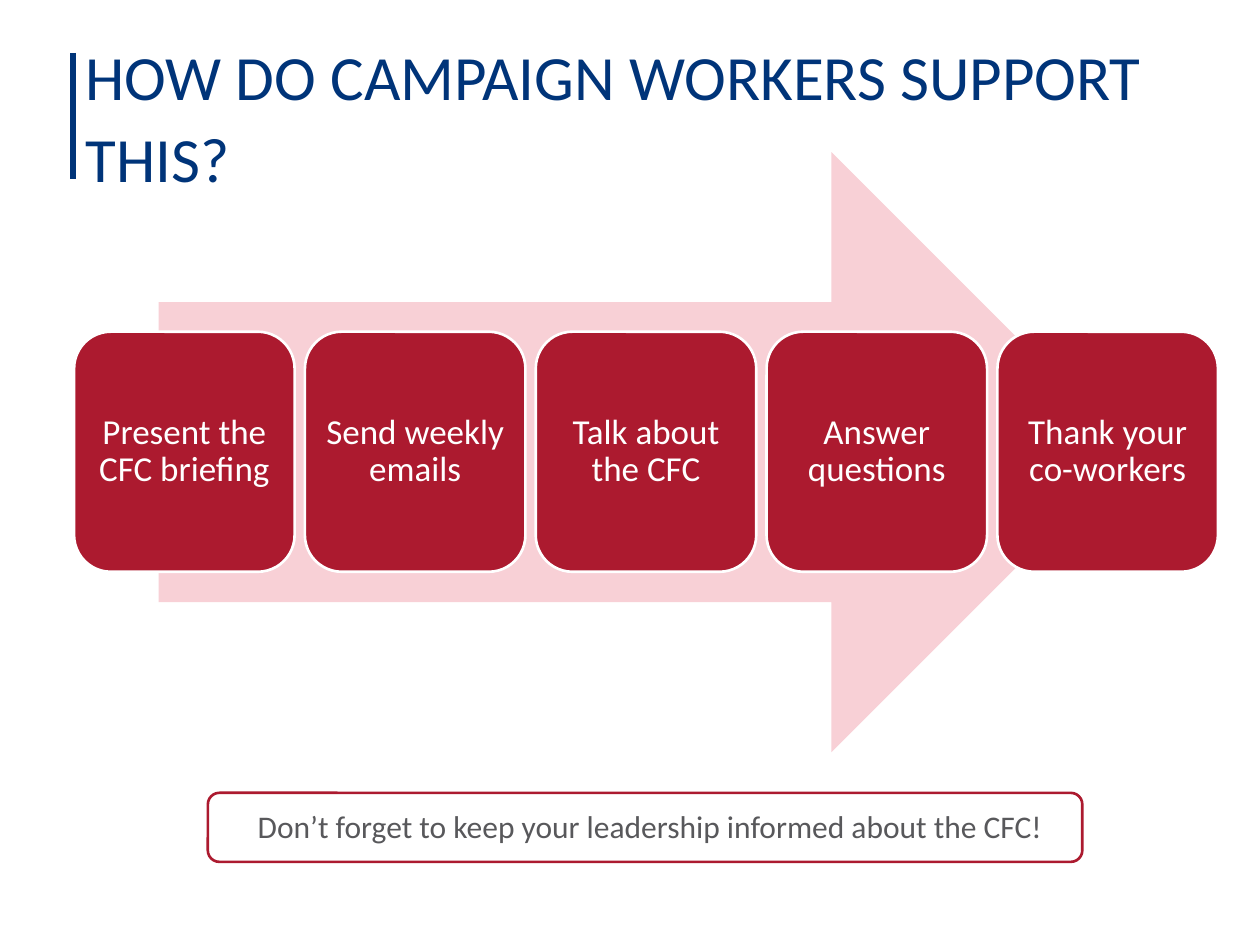
from lxml.etree import SubElement
from pptx import Presentation
from pptx.dml.color import RGBColor
from pptx.enum.shapes import MSO_CONNECTOR as Connector, MSO_SHAPE as Shape
from pptx.enum.text import MSO_ANCHOR as Anchor, PP_ALIGN as Align
from pptx.oxml.ns import qn
from pptx.util import Inches, Pt

NAVY = RGBColor(0x00, 0x34, 0x79)
CRIMSON = RGBColor(0xAC, 0x1A, 0x2F)
PINK = RGBColor(0xF8, 0xD0, 0xD6)
GREY = RGBColor(0x58, 0x58, 0x5B)
WHITE = RGBColor(0xFF, 0xFF, 0xFF)

WIDTH, HEIGHT = Inches(10), Inches(7.5)
STEPS = ["Present the CFC briefing", "Send weekly emails", "Talk about the CFC",
         "Answer questions", "Thank your co-workers"]

# Card row, in percent of the slide
FIRST_LEFT, CARD_PITCH, CARD_WIDTH = 5.88, 18.32, 17.5
CARD_TOP, CARD_HEIGHT = 35.1, 25.4

TITLE = {"size": Pt(36), "color": NAVY, "line_spacing": 1.08}
CARD = {"size": Pt(20), "color": WHITE, "line_spacing": 0.9, "alignment": Align.CENTER}
REMINDER = {"size": Pt(18), "color": GREY, "alignment": Align.CENTER}


def share(left, top, width, height):
    """Turn percentages of the slide into a position and size."""
    return (int(WIDTH * left / 100), int(HEIGHT * top / 100),
            int(WIDTH * width / 100), int(HEIGHT * height / 100))


def write(frame, text, look, anchor=Anchor.MIDDLE, inset=None):
    frame.word_wrap = True
    frame.vertical_anchor = anchor
    if inset is not None:
        for side in ("left", "top", "right", "bottom"):
            setattr(frame, f"margin_{side}", inset)
    paragraph = frame.paragraphs[0]
    run = paragraph.add_run()
    run.text = text
    run.font.name = "Calibri"
    for name, value in look.items():
        if name == "color":
            run.font.color.rgb = value
        else:
            setattr(run.font if name == "size" else paragraph, name, value)


def add_block(slide, kind, box, fill, outline=None):
    block = slide.shapes.add_shape(kind, *share(*box))
    block.shadow.inherit = False
    block.fill.solid()
    block.fill.fore_color.rgb = fill
    if outline is None:
        block.line.fill.background()
    else:
        block.line.color.rgb = outline
        block.line.width = Pt(1.5)
    return block


def add_label(slide, box, text, look, anchor):
    write(slide.shapes.add_textbox(*share(*box)).text_frame, text, look, anchor)


def add_title_rule(slide):
    left, top, _, length = share(5.8, 5.6, 0, 13.33)
    rule = slide.shapes.add_connector(Connector.STRAIGHT, left, top, left, top + length)
    rule.line.color.rgb = NAVY
    rule.line.width = Pt(3)
    SubElement(rule._element.spPr, qn("a:effectLst"))


def add_step(slide, column, text):
    left = FIRST_LEFT + column * CARD_PITCH
    card = add_block(slide, Shape.ROUNDED_RECTANGLE,
                     (left, CARD_TOP, CARD_WIDTH, CARD_HEIGHT), CRIMSON, WHITE)
    write(card.text_frame, text, CARD, inset=Inches(0.08))


def main():
    deck = Presentation()
    deck.slide_width, deck.slide_height = WIDTH, HEIGHT
    slide = deck.slides.add_slide(deck.slide_layouts[6])

    # Heading
    add_title_rule(slide)
    add_label(slide, (5.8, 2.8, 90.8, 18.4),
              "HOW DO CAMPAIGN WORKERS SUPPORT THIS?", TITLE, Anchor.MIDDLE)

    # Process arrow with its five steps
    add_block(slide, Shape.RIGHT_ARROW, (12.6, 16.1, 77.2, 63.5), PINK)
    for column, text in enumerate(STEPS):
        add_step(slide, column, text)

    # Reminder
    add_block(slide, Shape.ROUNDED_RECTANGLE, (16.5, 83.9, 69.4, 7.3), WHITE, CRIMSON)
    add_label(slide, (16.9, 84.8, 69.4, 5.3),
              "Don’t forget to keep your leadership informed about the CFC!",
              REMINDER, Anchor.TOP)

    deck.save("out.pptx")


if __name__ == "__main__":
    main()
